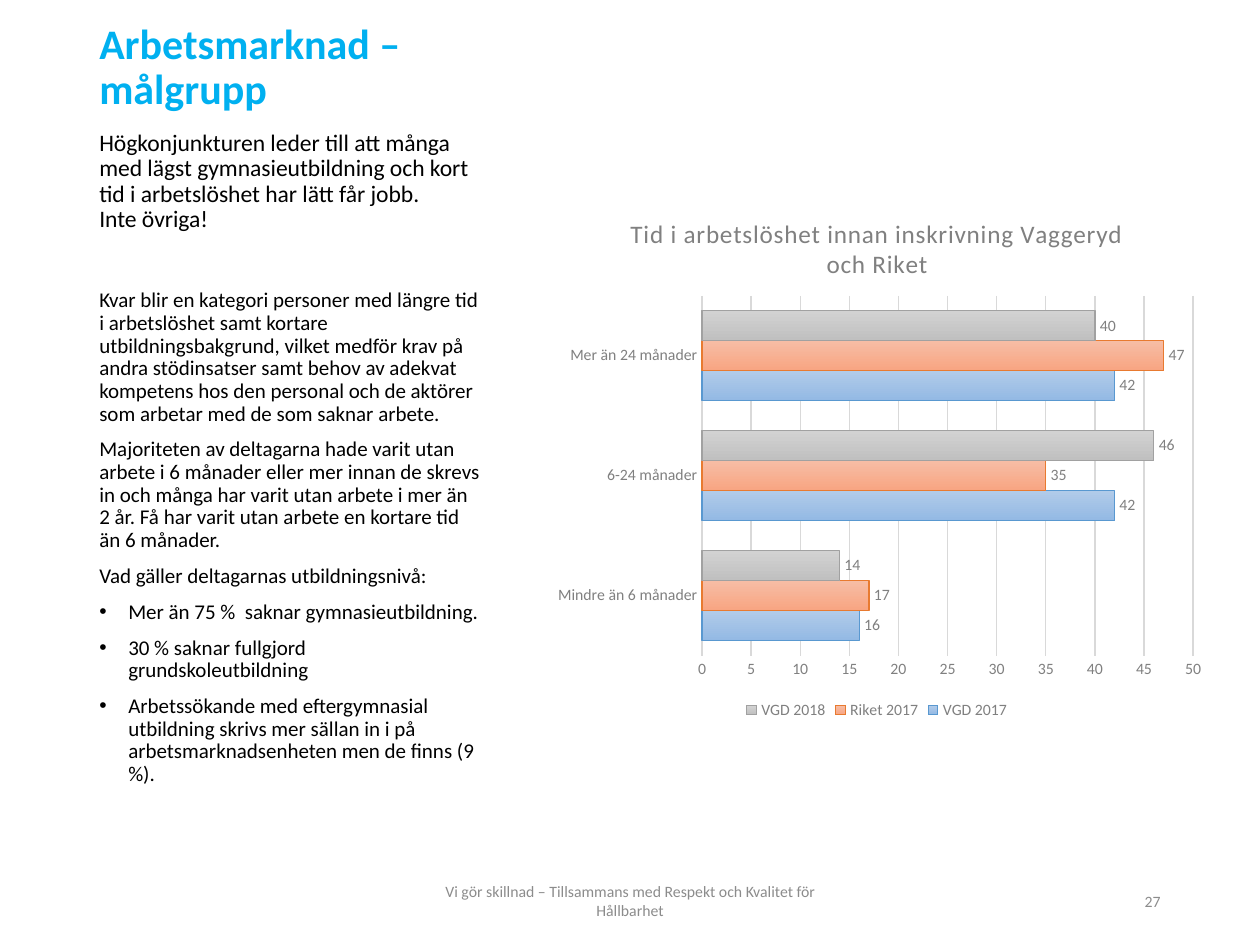
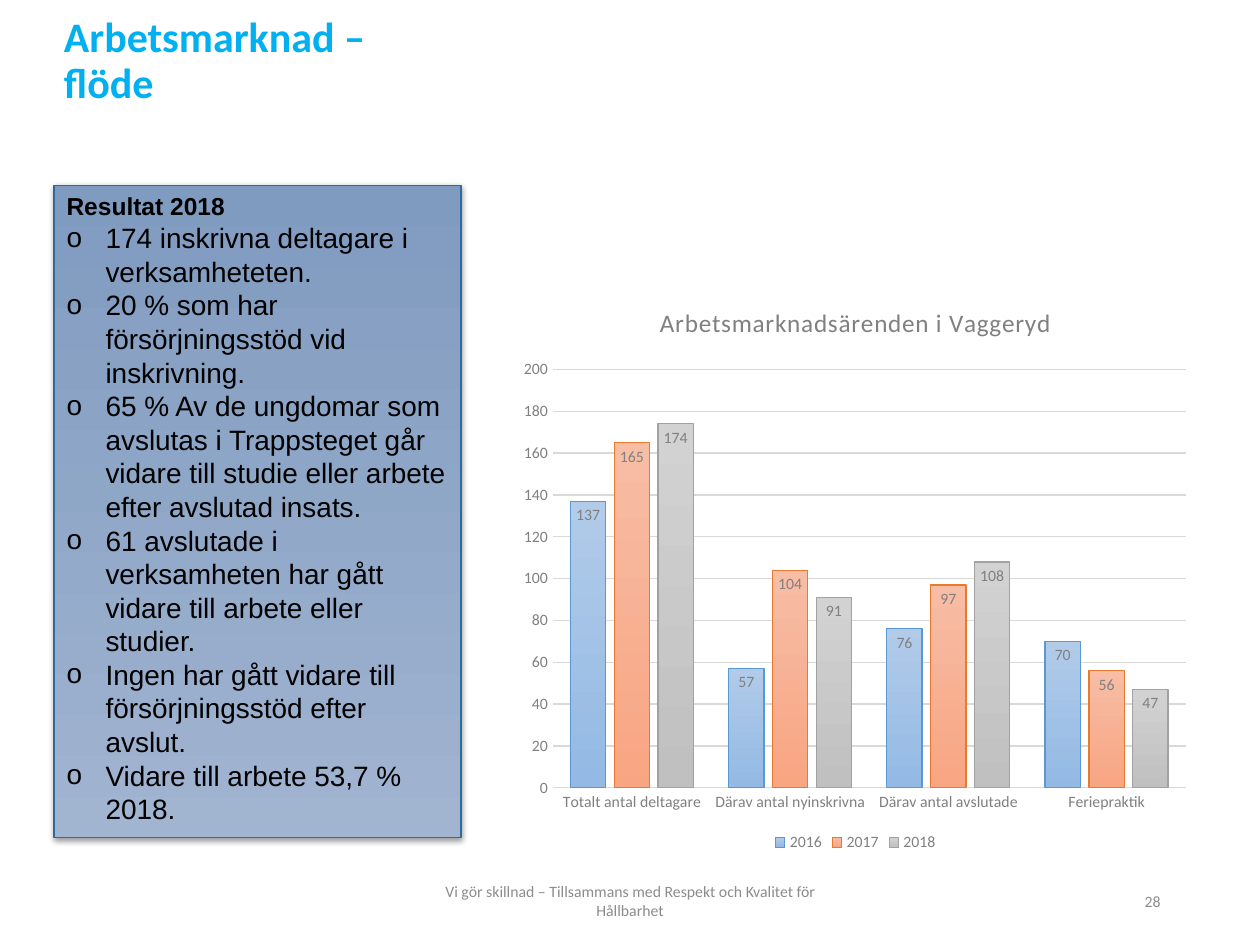
from lxml.etree import SubElement
from pptx import Presentation
from pptx.chart.data import CategoryChartData
from pptx.dml.color import RGBColor
from pptx.enum.chart import XL_CHART_TYPE as CT, XL_LABEL_POSITION as LP
from pptx.enum.chart import XL_LEGEND_POSITION as LEG, XL_TICK_MARK as TICK
from pptx.enum.shapes import MSO_SHAPE
from pptx.enum.text import MSO_ANCHOR as ANC, PP_ALIGN as AL
from pptx.oxml import parse_xml
from pptx.oxml.ns import nsdecls, qn
from pptx.util import Inches, Pt

rgb = RGBColor.from_string
BLACK, BLUE, GREY, FOOT, GRID = "000000", "00B0F0", "808080", "8C8C8C", "D9D9D9"
SERIES_STYLES = [("B1CBE9", "93B9E4", "5998D0"),
                 ("F7BDA5", "F8A582", "E87A30"),
                 ("D2D2D2", "C0C0C0", "A1A1A1")]
FOOTER = "Vi gör skillnad – Tillsammans med Respekt och Kvalitet för Hållbarhet"


def write(sp, paras, color=BLACK, anchor=ANC.TOP, align=AL.LEFT, spacing=None, before=0):
    tf = sp.text_frame
    tf.word_wrap, tf.vertical_anchor = True, anchor
    for i, (text, size, font, bold, bullet, indent) in enumerate(paras):
        p = tf.paragraphs[0] if i == 0 else tf.add_paragraph()
        fmt = {"alignment": align, "line_spacing": spacing}
        if i and before:
            fmt["space_before"] = Pt(before)
        for name, value in fmt.items():
            setattr(p, name, value)
        if bullet:
            pPr = p._p.get_or_add_pPr()
            pPr.set("marL", str(Inches(indent)))
            pPr.set("indent", str(-Inches(indent)))
            SubElement(pPr, qn("a:buFont")).set("typeface", "Arial")
            SubElement(pPr, qn("a:buChar")).set("char", bullet)
        r = p.add_run()
        r.text = text
        for name, value in {"size": Pt(size), "name": font, "bold": bold}.items():
            setattr(r.font, name, value)
        r.font.color.rgb = rgb(color)


def paint(fmt, top, bottom, line):
    fmt.fill.gradient()
    fmt.fill.gradient_angle = 270
    for stop, color in zip(fmt.fill.gradient_stops, (top, bottom)):
        stop.color.rgb = rgb(color)
    fmt.line.color.rgb = rgb(line)
    fmt.line.width = Pt(0.75)


prs = Presentation()
prs.slide_width, prs.slide_height = Inches(10), Inches(7.5)

pages = [
    {
        "number": "27", "title": "Arbetsmarknad – målgrupp", "title_at": (0.69, 0.12),
        "chart_title": "Tid i arbetslöshet innan inskrivning Vaggeryd och Riket",
        "type": CT.BAR_CLUSTERED, "at": (4.29, 1.55, 5.34, 4.2),
        "plot": (0.24, 0.19, 0.73, 0.68), "overlap": 0, "labels": LP.OUTSIDE_END,
        "max": 50, "step": 5,
        "cats": ["Mindre än 6 månader", "6-24 månader", "Mer än 24 månader"],
        "series": [("VGD 2017", (16, 42, 42)), ("Riket 2017", (17, 35, 47)),
                   ("VGD 2018", (14, 46, 40))],
    },
    {
        "number": "28", "title": "Arbetsmarknad – flöde", "title_at": (0.41, 0.07),
        "chart_title": "Arbetsmarknadsärenden i Vaggeryd",
        "type": CT.COLUMN_CLUSTERED, "at": (4.06, 2.25, 5.46, 4.55),
        "plot": (0.06, 0.15, 0.92, 0.73), "overlap": -24, "labels": LP.INSIDE_END,
        "max": 200, "step": 20,
        "cats": ["Totalt antal deltagare", "Därav antal nyinskrivna",
                 "Därav antal avslutade", "Feriepraktik"],
        "series": [("2016", (137, 57, 76, 70)), ("2017", (165, 104, 97, 56)),
                   ("2018", (174, 91, 108, 47))],
    },
]

slides = []
for page in pages:
    s = prs.slides.add_slide(prs.slide_layouts[6])
    slides.append(s)

    title = s.shapes.add_textbox(*map(Inches, page["title_at"] + (3.23, 0.83)))
    write(title, [(page["title"], 24, "Calibri", True, None, 0)], BLUE, ANC.BOTTOM, spacing=0.9)

    data = CategoryChartData(number_format="0")
    data.categories = page["cats"]
    for name, values in page["series"]:
        data.add_series(name, values)
    chart = s.shapes.add_chart(page["type"], *map(Inches, page["at"]), data).chart
    for name, value in {"size": Pt(9), "name": "Calibri"}.items():
        setattr(chart.font, name, value)
    chart.font.color.rgb = rgb(GREY)

    chart.has_title = True
    p = chart.chart_title.text_frame.paragraphs[0]
    r = p.add_run()
    r.text = page["chart_title"]
    for name, value in {"size": Pt(14.4), "name": "Calibri", "bold": False}.items():
        setattr(r.font, name, value)
    r.font.color.rgb = rgb(GREY)
    r._r.get_or_add_rPr().set("spc", "50")
    chart.chart_title.include_in_layout = False

    chart.has_legend = True
    chart.legend.position = LEG.BOTTOM
    chart.legend.include_in_layout = False

    cat, val = chart.category_axis, chart.value_axis
    for axis in (cat, val):
        axis.major_tick_mark = axis.minor_tick_mark = TICK.NONE
    val.minimum_scale, val.maximum_scale, val.major_unit = 0, page["max"], page["step"]
    val.has_major_gridlines = True
    val.format.line.fill.background()
    for line in (cat.format.line, val.major_gridlines.format.line):
        line.color.rgb = rgb(GRID)
        line.width = Pt(0.75)

    plot = chart.plots[0]
    plot.gap_width, plot.overlap, plot.vary_by_categories = 100, page["overlap"], False
    for series, style in zip(plot.series, SERIES_STYLES):
        paint(series.format, *style)
        series.invert_if_negative = False
        labels = series.data_labels
        labels.show_value, labels.position = True, page["labels"]
        labels.number_format, labels.number_format_is_linked = "0", False

    area = chart._chartSpace.chart.plotArea
    for old in area.findall(qn("c:layout")):
        area.remove(old)
    x, y, w, h = page["plot"]
    area.insert(0, parse_xml(
        f'<c:layout {nsdecls("c")}><c:manualLayout><c:layoutTarget val="inner"/>'
        f'<c:xMode val="edge"/><c:yMode val="edge"/><c:x val="{x}"/><c:y val="{y}"/>'
        f'<c:w val="{w}"/><c:h val="{h}"/></c:manualLayout></c:layout>'))

    for text, left, width, align in ((FOOTER, 3.31, 3.38, AL.CENTER),
                                     (page["number"], 7.06, 2.25, AL.RIGHT)):
        foot = s.shapes.add_textbox(*map(Inches, (left, 6.95, width, 0.4)))
        write(foot, [(text, 9, "Calibri", False, None, 0)], FOOT, ANC.MIDDLE, align)

target, flow = slides

intro = target.shapes.add_textbox(*map(Inches, (0.69, 0.5, 3.23, 1.75)))
intro.text_frame.margin_bottom = Inches(0.4)
write(intro, [(text, 13.5, "Calibri", False, None, 0) for text in (
    "Högkonjunkturen leder till att många med lägst gymnasieutbildning och kort tid i "
    "arbetslöshet har lätt får jobb.",
    "Inte övriga!")], anchor=ANC.BOTTOM, spacing=0.9)

body = target.shapes.add_textbox(*map(Inches, (0.69, 2.25, 3.23, 4.17)))
write(body, [(text, 12, "Calibri", False, bullet, 0.23) for text, bullet in (
    ("Kvar blir en kategori personer med längre tid i arbetslöshet samt kortare "
     "utbildningsbakgrund, vilket medför krav på andra stödinsatser samt behov av adekvat "
     "kompetens hos den personal och de aktörer som arbetar med de som saknar arbete.", None),
    ("Majoriteten av deltagarna hade varit utan arbete i 6 månader eller mer innan de skrevs "
     "in och många har varit utan arbete i mer än 2 år. Få har varit utan arbete en kortare "
     "tid än 6 månader.", None),
    ("Vad gäller deltagarnas utbildningsnivå:", None),
    ("Mer än 75 %  saknar gymnasieutbildning.", "•"),
    ("30 % saknar fullgjord grundskoleutbildning", "•"),
    ("Arbetssökande med eftergymnasial utbildning skrivs mer sällan in i på "
     "arbetsmarknadsenheten men de finns (9 %).", "•"))], spacing=0.9, before=7.5)

results = flow.shapes.add_shape(MSO_SHAPE.RECTANGLE, *map(Inches, (0.43, 1.47, 3.23, 5.18)))
paint(results, "809BC0", "A1B4D0", "2D6B9E")
results.shadow.inherit = False
effects = results._element.spPr.find(qn("a:effectLst"))
effects.append(parse_xml(
    f'<a:outerShdw {nsdecls("a")} blurRad="{Pt(3.1)}" dist="{Pt(1.6)}" dir="5400000" '
    f'rotWithShape="0"><a:srgbClr val="{BLACK}"><a:alpha val="38000"/></a:srgbClr>'
    '</a:outerShdw>'))
write(results, [("Resultat 2018", 14, "Arial", True, None, 0)] + [
    (text, 16, "Arial", False, "o", 0.31) for text in (
        "174 inskrivna deltagare i verksamheteten.",
        "20 % som har försörjningsstöd vid inskrivning.",
        "65 % Av de ungdomar som avslutas i Trappsteget går vidare till studie eller arbete "
        "efter avslutad insats.",
        "61 avslutade i verksamheten har gått vidare till arbete eller studier.",
        "Ingen har gått vidare till försörjningsstöd efter avslut.",
        "Vidare till arbete 53,7 % 2018.")])

prs.save("out.pptx")
